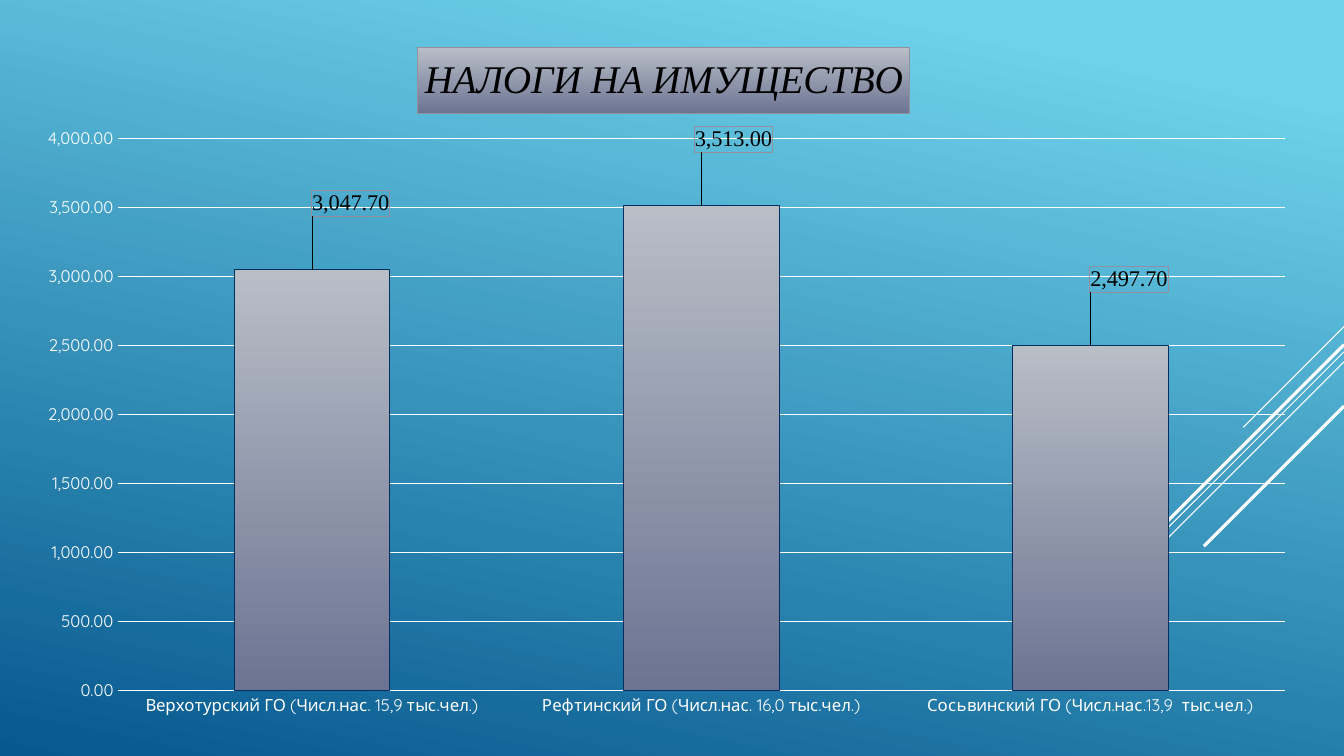
from pptx import Presentation
from pptx.chart.data import CategoryChartData
from pptx.dml.color import RGBColor
from pptx.enum.chart import XL_CHART_TYPE as ChartType
from pptx.enum.chart import XL_LABEL_POSITION as LabelPosition
from pptx.enum.chart import XL_TICK_MARK as TickMark
from pptx.oxml import parse_xml
from pptx.oxml.ns import nsdecls, qn
from pptx.util import Inches, Pt

WHITE = RGBColor(0xFF, 0xFF, 0xFF)
BLACK = RGBColor(0x00, 0x00, 0x00)
SKY = RGBColor(0x6E, 0xD2, 0xEB)
DEEP_BLUE = RGBColor(0x06, 0x58, 0x8E)
SILVER = RGBColor(0xB8, 0xBE, 0xC6)
SLATE = RGBColor(0x6C, 0x74, 0x93)
NAVY = RGBColor(0x05, 0x2E, 0x5F)
FRAME_GREY = RGBColor(0x94, 0x8F, 0x9C)

TITLE = "НАЛОГИ НА ИМУЩЕСТВО"
NUMBER_FORMAT = "#,##0.00"
TAXES = {
    "Верхотурский ГО (Числ.нас. 15,9 тыс.чел.)": 3047.7,
    "Рефтинский ГО (Числ.нас. 16,0 тыс.чел.)": 3513,
    "Сосьвинский ГО (Числ.нас.13,9  тыс.чел.)": 2497.7,
}
LABEL_SHIFTS = [(0.03, -0.07), (0.025, -0.07), (0.03, -0.07)]

AXIS_FONT = {"name": "Quicksand", "size": Pt(12)}
TITLE_FONT = {"name": "Times New Roman", "size": Pt(28), "bold": False, "italic": True}
LABEL_FONT = {"name": "Times New Roman", "size": Pt(16)}

# Start height at the right edge, diagonal run, line width
RAYS = [(3.24, 1, 0.75), (3.49, 3.26, 0.75), (3.59, 2.07, 0.75),
        (3.42, 1.91, 2.25), (4.03, 1.39, 2.25)]


def style_font(font, values, color):
    for name, value in values.items():
        setattr(font, name, value)
    font.color.rgb = color


def style_line(line, color, width):
    line.color.rgb = color
    line.width = Pt(width)


def paint_gradient(fill, stops, angle):
    """Fill with (position, colour) stops; the angle runs clockwise."""
    fill.gradient()
    fill.gradient_angle = 360 - angle
    for stop, (position, color) in zip(fill.gradient_stops, stops):
        stop.position = position
        stop.color.rgb = color


def set_layout(parent, index, target="", **values):
    """Place a chart part by fractions of the chart's size."""
    for old in parent.findall(qn("c:layout")):
        parent.remove(old)
    inner = f'<c:layoutTarget val="{target}"/>' if target else ""
    if target or parent.tag == qn("c:title"):
        inner += '<c:xMode val="edge"/><c:yMode val="edge"/>'
    inner += "".join(f'<c:{name} val="{value}"/>' for name, value in values.items())
    parent.insert(index, parse_xml(
        f'<c:layout {nsdecls("c")}><c:manualLayout>{inner}</c:manualLayout></c:layout>'))


def draw_rays(slide, right):
    for top, run, width in RAYS:
        ray = slide.shapes.add_connector(
            1, Inches(right), Inches(top), Inches(right - run), Inches(top + run))
        style_line(ray.line, WHITE, width)
        ray._element.spPr.append(parse_xml(f'<a:effectLst {nsdecls("a")}/>'))


def style_title(chart):
    title = chart.chart_title
    title.text_frame.text = TITLE
    style_font(title.text_frame.paragraphs[0].runs[0].font, TITLE_FONT, BLACK)
    paint_gradient(title.format.fill, [(0, SILVER), (1, SLATE)], 90)
    style_line(title.format.line, FRAME_GREY, 0.75)
    set_layout(chart._chartSpace.xpath("c:chart/c:title")[0], 1, x=0.307, y=0.027)


def style_axes(chart):
    for axis in (chart.category_axis, chart.value_axis):
        axis.major_tick_mark = axis.minor_tick_mark = TickMark.NONE
        axis.format.line.fill.background()
        style_font(axis.tick_labels.font, AXIS_FONT, WHITE)
    values = chart.value_axis
    values.minimum_scale, values.maximum_scale, values.major_unit = 0, 4000, 500
    values.tick_labels.number_format = NUMBER_FORMAT
    values.tick_labels.number_format_is_linked = False
    style_line(values.major_gridlines.format.line, WHITE, 0.75)


def style_columns(chart):
    plot = chart.plots[0]
    plot.gap_width = 150
    plot.vary_by_categories = False
    columns = plot.series[0]
    paint_gradient(columns.format.fill, [(0, SILVER), (1, SLATE)], 90)
    style_line(columns.format.line, NAVY, 0.75)

    labels = columns.data_labels
    labels.show_value = True
    labels.number_format = NUMBER_FORMAT
    labels.number_format_is_linked = False
    style_font(labels.font, LABEL_FONT, BLACK)
    for index, (x, y) in enumerate(LABEL_SHIFTS):
        label = columns.points[index].data_label
        label.position = LabelPosition.OUTSIDE_END
        style_font(label.font, LABEL_FONT, BLACK)
        element = chart._chartSpace.xpath(".//c:dLbl")[index]
        set_layout(element, 1, x=x, y=y)
        for old in element.findall(qn("c:spPr")):
            element.remove(old)
        element.find(qn("c:txPr")).addprevious(parse_xml(
            f'<c:spPr {nsdecls("c", "a")}><a:noFill/><a:ln w="9525"><a:solidFill>'
            f'<a:srgbClr val="{FRAME_GREY}"/></a:solidFill></a:ln></c:spPr>'))


def draw_tax_chart(slide, left, top, width, height):
    data = CategoryChartData(number_format=NUMBER_FORMAT)
    data.categories = list(TAXES)
    data.add_series(TITLE, list(TAXES.values()))
    chart = slide.shapes.add_chart(
        ChartType.COLUMN_CLUSTERED, Inches(left), Inches(top),
        Inches(width), Inches(height), data).chart
    chart.has_legend = False
    style_font(chart.font, {"name": "Quicksand", "size": Pt(10)}, WHITE)
    style_title(chart)
    style_axes(chart)
    style_columns(chart)
    set_layout(chart._chartSpace.xpath("c:chart/c:plotArea")[0], 0, "inner",
               x=0.074, y=0.157, w=0.906, h=0.787)


def main():
    deck = Presentation()
    deck.slide_width, deck.slide_height = Inches(13.33), Inches(7.5)
    slide = deck.slides.add_slide(deck.slide_layouts[6])
    paint_gradient(slide.background.fill, [(0.1, SKY), (1, DEEP_BLUE)], 102)
    draw_rays(slide, 13.33)
    draw_tax_chart(slide, 0.22, 0.28, 12.78, 6.96)
    deck.save("out.pptx")


if __name__ == "__main__":
    main()
